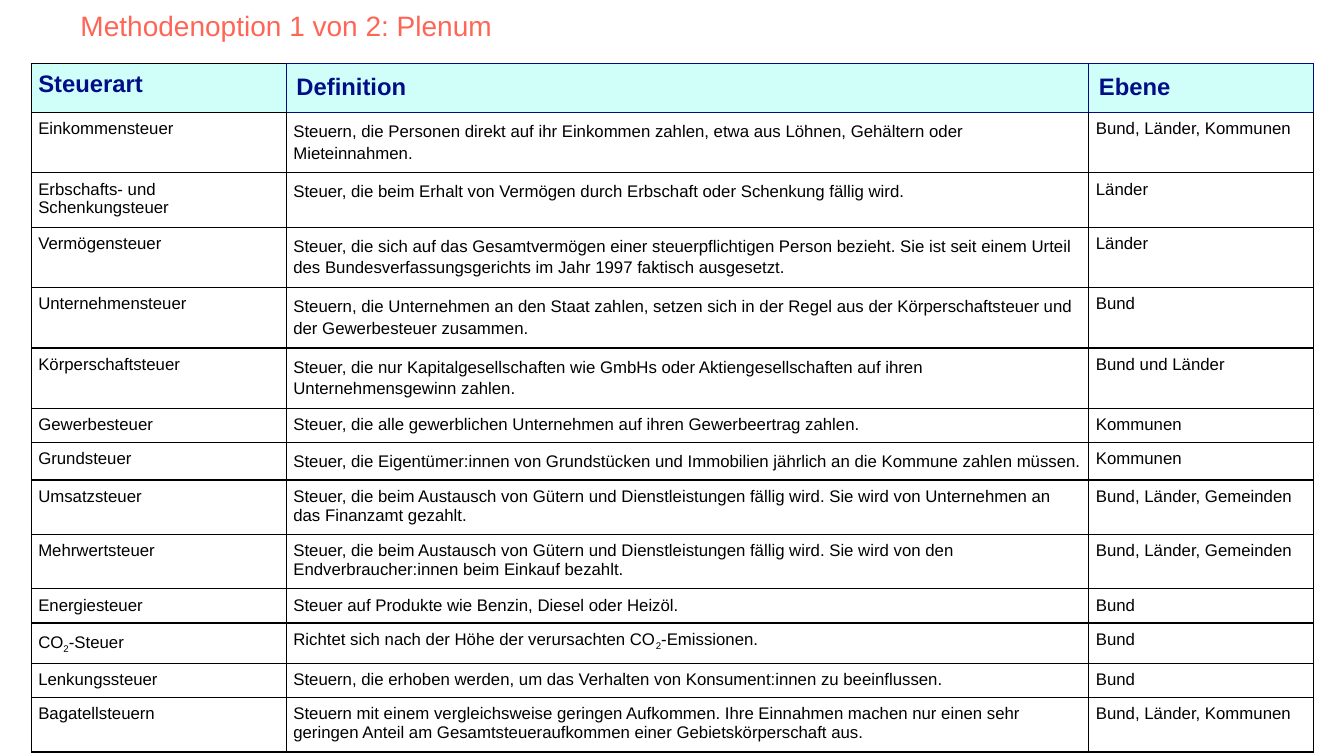
from pptx import Presentation
from pptx import util as u
from pptx.dml.color import RGBColor
from pptx.oxml import parse_xml
from pptx.oxml.ns import nsdecls

COLORS = {"title": "FF6555", "head": "000D86", "head_fill": "D0FFF9", "body": "000000"}
FONT = "Arial"
# "₂" marks a subscript 2
HEADER = ("Steuerart", "Definition", "Ebene")
TAXES = [
    ("Einkommensteuer", "Steuern, die Personen direkt auf ihr Einkommen zahlen, etwa aus Löhnen, Gehältern oder Mieteinnahmen.", "Bund, Länder, Kommunen"),
    ("Erbschafts- und Schenkungsteuer", "Steuer, die beim Erhalt von Vermögen durch Erbschaft oder Schenkung fällig wird.", "Länder"),
    ("Vermögensteuer", "Steuer, die sich auf das Gesamtvermögen einer steuerpflichtigen Person bezieht. Sie ist seit einem Urteil des Bundesverfassungsgerichts im Jahr 1997 faktisch ausgesetzt.", "Länder"),
    ("Unternehmensteuer", "Steuern, die Unternehmen an den Staat zahlen, setzen sich in der Regel aus der Körperschaftsteuer und der Gewerbesteuer zusammen.", "Bund"),
    ("Körperschaftsteuer", "Steuer, die nur Kapitalgesellschaften wie GmbHs oder Aktiengesellschaften auf ihren Unternehmensgewinn zahlen.", "Bund und Länder"),
    ("Gewerbesteuer", "Steuer, die alle gewerblichen Unternehmen auf ihren Gewerbeertrag zahlen.", "Kommunen"),
    ("Grundsteuer", "Steuer, die Eigentümer:innen von Grundstücken und Immobilien jährlich an die Kommune zahlen müssen.", "Kommunen"),
    ("Umsatzsteuer", "Steuer, die beim Austausch von Gütern und Dienstleistungen fällig wird. Sie wird von Unternehmen an das Finanzamt gezahlt.", "Bund, Länder, Gemeinden"),
    ("Mehrwertsteuer", "Steuer, die beim Austausch von Gütern und Dienstleistungen fällig wird. Sie wird von den Endverbraucher:innen beim Einkauf bezahlt.", "Bund, Länder, Gemeinden"),
    ("Energiesteuer", "Steuer auf Produkte wie Benzin, Diesel oder Heizöl.", "Bund"),
    ("CO₂-Steuer", "Richtet sich nach der Höhe der verursachten CO₂-Emissionen.", "Bund"),
    ("Lenkungssteuer", "Steuern, die erhoben werden, um das Verhalten von Konsument:innen zu beeinflussen.", "Bund"),
    ("Bagatellsteuern", "Steuern mit einem vergleichsweise geringen Aufkommen. Ihre Einnahmen machen nur einen sehr geringen Anteil am Gesamtsteueraufkommen einer Gebietskörperschaft aus.", "Bund, Länder, Kommunen"),
]
COL_WIDTHS = [2.53, 7.96, 2.23]
ROW_HEIGHTS = [0.45, 0.54, 0.5, 0.54, 0.54, 0.54, 0.31, 0.32, 0.5, 0.5, 0.31, 0.32, 0.31, 0.5]
# Cells (row, column) with wider line spacing
LOOSE = {(r, 1) for r in (1, 2, 3, 4, 5, 7)} | {(11, 0)}


def style(r, size, color, bold=False):
    r.font.name, r.font.size, r.font.bold = FONT, u.Pt(size), bold
    r.font.color.rgb = RGBColor.from_string(COLORS[color])


def border(cell, side, color, width):
    cell._tc.get_or_add_tcPr().append(parse_xml(
        f'<a:ln{side} {nsdecls("a")} w="{u.Pt(width)}"><a:solidFill>'
        f'<a:srgbClr val="{COLORS[color]}"/></a:solidFill></a:ln{side}>'))


prs = Presentation()
prs.slide_width, prs.slide_height = u.Inches(13.33), u.Inches(7.5)
s = prs.slides.add_slide(prs.slide_layouts[6])

# Title
tf = s.shapes.add_textbox(u.Inches(0.7), u.Inches(0.07), u.Inches(7.57), u.Inches(0.53)).text_frame
tf.word_wrap = True
tf.text = "Methodenoption 1 von 2: Plenum"
p = tf.paragraphs[0]
p.line_spacing = 0.9
style(p.runs[0], 20, "title")

# Table grid
tbl = s.shapes.add_table(len(ROW_HEIGHTS), len(COL_WIDTHS), u.Inches(0.31), u.Inches(0.63),
                         u.Inches(sum(COL_WIDTHS)), u.Inches(sum(ROW_HEIGHTS))).table
tbl.first_row = tbl.horz_banding = False
for column, width in zip(tbl.columns, COL_WIDTHS):
    column.width = u.Inches(width)
for row, height in zip(tbl.rows, ROW_HEIGHTS):
    row.height = u.Inches(height)

# Table cells
for i, texts in enumerate([HEADER] + TAXES):
    for j, content in enumerate(texts):
        cell = tbl.cell(i, j)
        margin = u.Inches(0.1 if i == 0 and j > 0 else 0.07)
        cell.margin_left = cell.margin_right = cell.margin_top = cell.margin_bottom = margin

        # Navy lines frame the last two header cells, black lines the rest
        for side in "LRTB":
            navy = ((i == 0 and (j > 0 or side == "R"))
                    or (i == 1 and j > 0 and side == "T"))
            border(cell, side, "head" if navy else "body", 0.75 if navy else 1)
        if i == 0:
            cell.fill.solid()
            cell.fill.fore_color.rgb = RGBColor.from_string(COLORS["head_fill"])
        else:
            cell.fill.background()

        # Text, with subscripts
        p = cell.text_frame.paragraphs[0]
        if (i, j) in LOOSE:
            p.line_spacing = 1.15
        before, sub, after = content.partition("₂")
        for part in filter(None, (before, sub, after)):
            r = p.add_run()
            r.text = "2" if part == "₂" else part
            style(r, 17 if i == 0 else 12, "head" if i == 0 else "body", i == 0)
            if part == "₂":
                r.font._element.set("baseline", "-25000")

prs.save("out.pptx")
